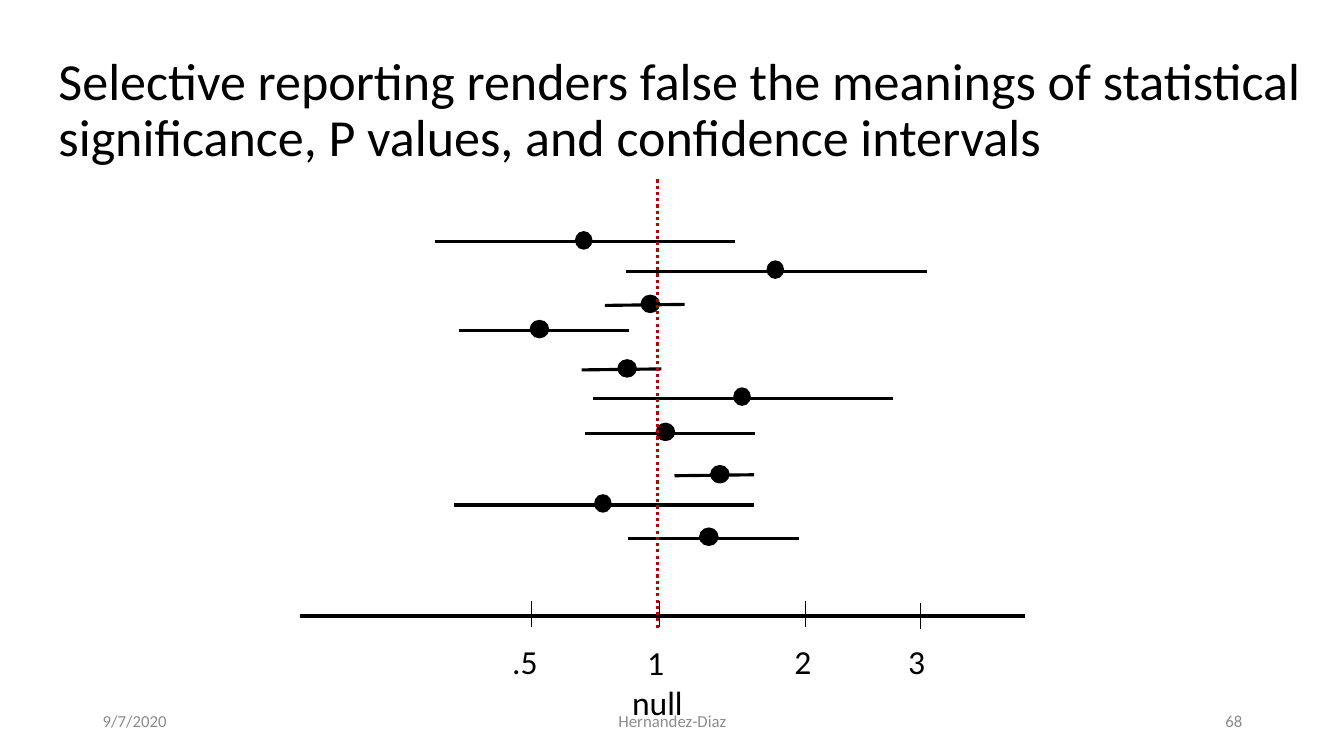
from dataclasses import dataclass

from lxml import etree
from pptx import Presentation
from pptx import util as u
from pptx.dml.color import RGBColor
from pptx.enum import dml, shapes, text
from pptx.oxml.ns import qn

EMU_PER_PX = 9144  # 100 px to the inch
TITLE_ONLY = 5


def px(length):
    return u.Emu(length * EMU_PER_PX)


@dataclass(frozen=True)
class Theme:
    font: str = "Calibri"
    ink: RGBColor = RGBColor(0, 0, 0)
    null_red: RGBColor = RGBColor(0xC0, 0, 0)
    footer_grey: RGBColor = RGBColor(0x8C, 0x8C, 0x8C)
    title_size: float = 37.2
    label_size: int = 24
    footer_size: int = 12


@dataclass(frozen=True)
class Precision:
    """Shape of one interval: its length, and the dot's offset, width and line tilt."""
    length: int
    dot_offset: int
    dot_width: int
    tilt: int = 0


WIDE = Precision(298, 140, 16)
MEDIUM = Precision(169, 71, 18)
NARROW = Precision(79, 36, 18, tilt=1)

# lower limit, height on the slide, precision
STUDIES = [
    (431, 240, WIDE),
    (621, 269, WIDE),
    (600, 303, NARROW),
    (455, 328, MEDIUM),
    (577, 367, NARROW),
    (588, 395, WIDE),
    (580, 430, MEDIUM),
    (669, 472, NARROW),
    (450, 501, WIDE),
    (623, 534, MEDIUM),
]

# tick x, tick top, label, label left, label top, label width
TICKS = [
    (527, 596, ".5", 498, 631, 58),
    (654, 596, "1", 632, 632, 44),
    (799, 596, "2", 778, 631, 44),
    (913, 598, "3", 891, 631, 44),
]

FOOTERS = [
    ("9/7/2020", 92, 300, text.PP_ALIGN.LEFT),
    ("Hernandez-Diaz", 442, 450, text.PP_ALIGN.CENTER),
    ("68", 942, 300, text.PP_ALIGN.RIGHT),
]


class ForestSlide:
    def __init__(self, deck, theme):
        self.theme = theme
        self.slide = deck.slides.add_slide(deck.slide_layouts[TITLE_ONLY])

    def style(self, paragraph, size, color, align=text.PP_ALIGN.LEFT):
        paragraph.alignment = align
        paragraph.font.name = self.theme.font
        paragraph.font.size = u.Pt(size)
        paragraph.font.color.rgb = color

    def title(self, wording, left, top, width, height):
        heading = self.slide.shapes.title
        heading.left, heading.top = px(left), px(top)
        heading.width, heading.height = px(width), px(height)
        frame = heading.text_frame
        frame.text = wording
        frame.word_wrap = True
        frame.auto_size = text.MSO_AUTO_SIZE.NONE
        frame.vertical_anchor = text.MSO_ANCHOR.MIDDLE
        frame.margin_bottom = px(54)  # lifts the two lines above the box centre
        paragraph = frame.paragraphs[0]
        paragraph.line_spacing = 0.9
        self.style(paragraph, self.theme.title_size, self.theme.ink)

    def line(self, start, end, weight, color=None, dash=None, parent=None):
        owner = parent or self.slide
        rule = owner.shapes.add_connector(
            shapes.MSO_CONNECTOR.STRAIGHT, *map(px, start + end))
        rule.line.width = u.Pt(weight)
        rule.line.color.rgb = color or self.theme.ink
        if dash:
            rule.line.dash_style = dash
        etree.SubElement(rule._element.spPr, qn("a:effectLst"))

    def study(self, lower, y, precision):
        """Group a confidence interval with the dot of its estimate."""
        group = self.slide.shapes.add_group_shape()
        self.line((lower, y), (lower + precision.length, y - precision.tilt),
                  2.25, parent=group)
        estimate = group.shapes.add_shape(
            shapes.MSO_SHAPE.OVAL, px(lower + precision.dot_offset), px(y - 10),
            px(precision.dot_width), px(17))
        estimate.shadow.inherit = False
        estimate.fill.solid()
        estimate.fill.fore_color.rgb = self.theme.ink
        estimate.line.color.rgb = self.theme.ink
        estimate.line.width = u.Pt(1)

    def text_box(self, wording, left, top, width, height):
        frame = self.slide.shapes.add_textbox(
            *map(px, (left, top, width, height))).text_frame
        frame.word_wrap = True
        frame.text = wording
        return frame

    def label(self, wording, left, top, width):
        frame = self.text_box(wording, left, top, width, 50)
        frame.auto_size = text.MSO_AUTO_SIZE.SHAPE_TO_FIT_TEXT
        self.style(frame.paragraphs[0], self.theme.label_size, self.theme.ink)

    def footer(self, wording, left, width, align):
        frame = self.text_box(wording, left, 695, width, 40)
        frame.vertical_anchor = text.MSO_ANCHOR.MIDDLE
        self.style(frame.paragraphs[0], self.theme.footer_size,
                   self.theme.footer_grey, align)


def main():
    deck = Presentation()
    deck.slide_width, deck.slide_height = px(1333), px(750)
    theme = Theme()
    forest = ForestSlide(deck, theme)

    forest.title("Selective reporting renders false the meanings of statistical "
                 "significance, P values, and confidence intervals",
                 48, 60, 1269, 150)

    forest.line((298, 611), (1017, 611), 3)
    for x, tick_top, ratio, left, top, width in TICKS:
        forest.line((x, tick_top), (x, tick_top + 26), 0.5)
        forest.label(ratio, left, top, width)

    for lower, y, precision in STUDIES:
        forest.study(lower, y, precision)

    forest.line((652, 178), (652, 625), 2.25, theme.null_red,
                dml.MSO_LINE.ROUND_DOT)
    forest.label("null", 617, 672, 81)

    for wording, left, width, align in FOOTERS:
        forest.footer(wording, left, width, align)

    deck.save("out.pptx")


if __name__ == "__main__":
    main()
